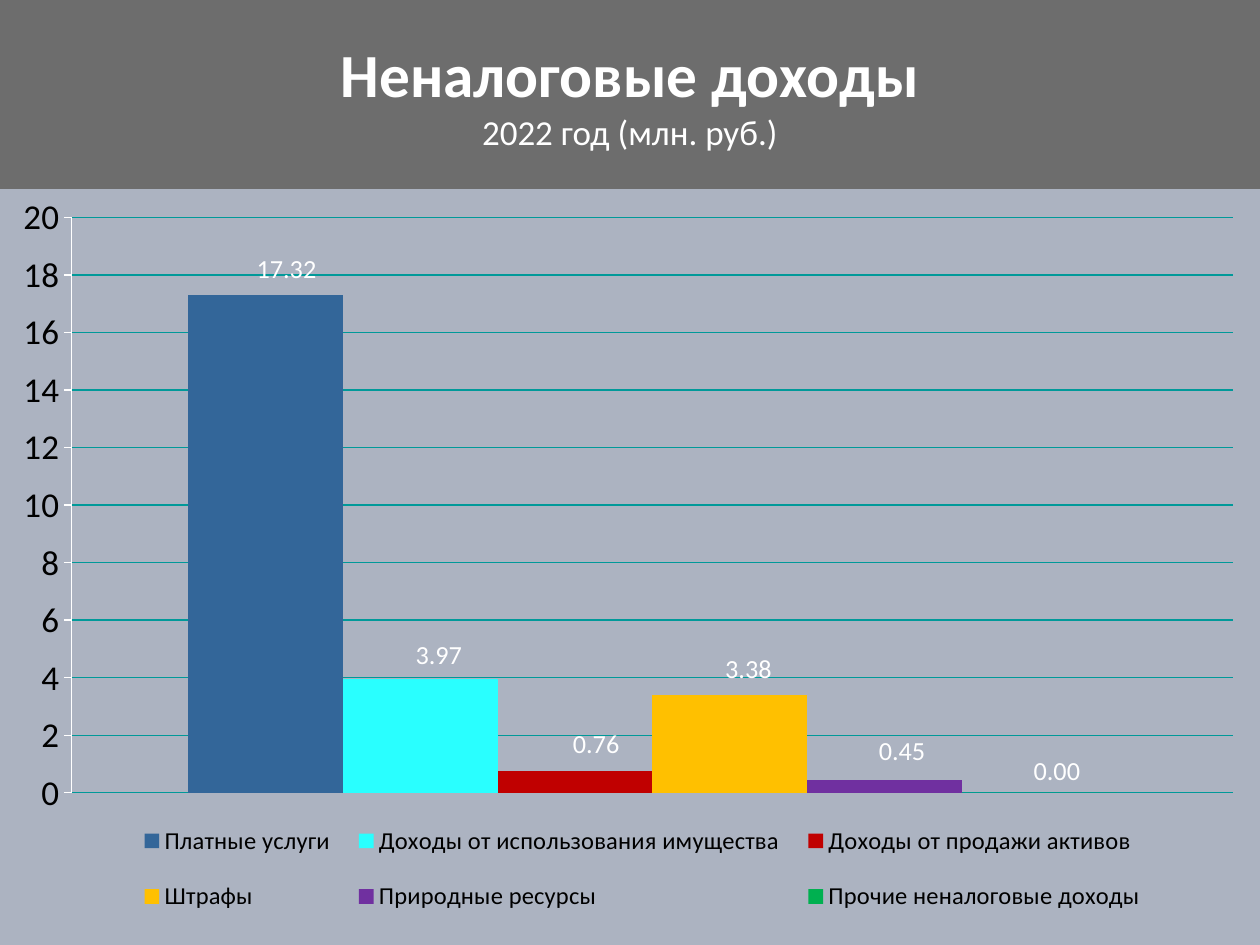
from lxml import etree
from pptx import Presentation
from pptx.chart.data import CategoryChartData
from pptx.dml.color import RGBColor
from pptx.enum.chart import (XL_CHART_TYPE as ChartType, XL_LABEL_POSITION as LabelPos,
                             XL_LEGEND_POSITION as LegendPos, XL_TICK_MARK as Tick)
from pptx.enum.shapes import MSO_SHAPE as Shape
from pptx.enum.text import MSO_ANCHOR as Anchor, PP_ALIGN as Align
from pptx.oxml import parse_xml
from pptx.oxml.ns import nsdecls, qn
from pptx.util import Pt

WHITE, BLACK = "FFFFFF", "000000"
# Name, value, colour, label shift as a share of the chart
INCOME = [
    ("Платные услуги", 17.32, "336699", (0.017, -0.007)),
    ("Доходы от использования имущества", 3.97, "29FFFF", (0.015, -0.004)),
    ("Доходы от продажи активов", 0.76, "C00000", (0.017, -0.008)),
    ("Штрафы", 3.38, "FFC000", (0.015, -0.007)),
    ("Природные ресурсы", 0.45, "7030A0", (0.014, -0.011)),
    ("Прочие неналоговые доходы", 0, "00B050", (0.014, -0.001)),
]


def paint(color_format, color):
    color_format.rgb = RGBColor.from_string(color)


def fill_solid(fill, color):
    fill.solid()
    paint(fill.fore_color, color)


def style_font(font, size, color, name="Calibri", bold=False):
    font.size, font.name, font.bold = Pt(size), name, bold
    paint(font.color, color)


def manual_layout(**values):
    """Build a c:layout element from its child tags and values."""
    layout = parse_xml(f"<c:layout {nsdecls('c')}><c:manualLayout/></c:layout>")
    for tag, value in values.items():
        etree.SubElement(layout[0], qn(f"c:{tag}")).set("val", str(value))
    return layout


def place_after(anchor, **values):
    """Put a manual layout right after the anchor, replacing any in the parent."""
    parent = anchor.getparent()
    for layout in parent.findall(qn("c:layout")):
        parent.remove(layout)
    anchor.addnext(manual_layout(**values))


def add_header(slide, title, subtitle):
    header = slide.shapes.add_shape(Shape.RECTANGLE, 0, 0, Pt(720), Pt(108))
    header.shadow.inherit = False
    fill_solid(header.fill, "6D6D6D")
    header.line.fill.background()
    frame = header.text_frame
    frame.word_wrap = True
    frame.vertical_anchor = Anchor.MIDDLE
    frame.text = f"{title}\n{subtitle}"
    for paragraph, size, bold in zip(frame.paragraphs, (35, 20), (True, False)):
        paragraph.alignment = Align.CENTER
        style_font(paragraph.runs[0].font, size, WHITE, bold=bold)


def add_value_label(series, shift):
    label = series.points[0].data_label
    style_font(label.font, 15, WHITE)
    label.position = LabelPos.OUTSIDE_END
    # Two decimals, and a slight shift right and up
    index = next(series._element.iter(qn("c:dLbl"))).find(qn("c:idx"))
    index.addnext(parse_xml(
        f'<c:numFmt {nsdecls("c")} formatCode="0.00" sourceLinked="0"/>'))
    place_after(index, x=shift[0], y=shift[1])


def style_axes(chart):
    chart.category_axis.visible = False
    axis = chart.value_axis
    axis.minimum_scale, axis.maximum_scale, axis.major_unit = 0, 20, 2
    axis.major_tick_mark, axis.minor_tick_mark = Tick.OUTSIDE, Tick.NONE
    axis.tick_labels.number_format = "0"
    axis.tick_labels.number_format_is_linked = False
    style_font(axis.tick_labels.font, 20, BLACK)
    for line, color in ((axis.format.line, WHITE),
                        (axis.major_gridlines.format.line, "009999")):
        line.width = Pt(0.75)
        fill_solid(line.fill, color)


def add_legend(chart):
    chart.has_legend = True
    chart.legend.position = LegendPos.BOTTOM
    chart.legend.include_in_layout = False
    style_font(chart.legend.font, 14, BLACK)
    # Wide enough for three columns
    position = next(chart._chartSpace.iter(qn("c:legendPos")))
    place_after(position, xMode="edge", yMode="edge",
                x=0.094, y=0.813, w=0.832, h=0.186)


def add_income_chart(slide):
    data = CategoryChartData(number_format="0.00")
    data.categories = ["1"]
    for name, value, _, _ in INCOME:
        data.add_series(name, [value])
    chart = slide.shapes.add_chart(ChartType.COLUMN_CLUSTERED, Pt(4), Pt(112),
                                   Pt(712), Pt(424), data).chart
    chart.has_title = False
    style_font(chart.font, 18, WHITE, "Cabin")
    style_axes(chart)

    # Columns and their values
    plot = chart.plots[0]
    plot.gap_width, plot.overlap = 150, 0
    plot.vary_by_categories = False
    for series, (_, _, color, shift) in zip(plot.series, INCOME):
        fill_solid(series.format.fill, color)
        series.invert_if_negative = False
        add_value_label(series, shift)

    add_legend(chart)

    # Fixed plot area
    plot_area = next(chart._chartSpace.iter(qn("c:plotArea")))
    for layout in plot_area.findall(qn("c:layout")):
        plot_area.remove(layout)
    plot_area.insert(0, manual_layout(layoutTarget="inner", xMode="edge", yMode="edge",
                                      x=0.052, y=0.022, w=0.932, h=0.781))


def main():
    deck = Presentation()
    deck.slide_width, deck.slide_height = Pt(720), Pt(540)
    slide = deck.slides.add_slide(deck.slide_layouts[6])
    fill_solid(slide.background.fill, "ACB3C1")
    add_header(slide, "Неналоговые доходы", "2022 год (млн. руб.)")
    add_income_chart(slide)
    deck.save("out.pptx")


if __name__ == "__main__":
    main()
